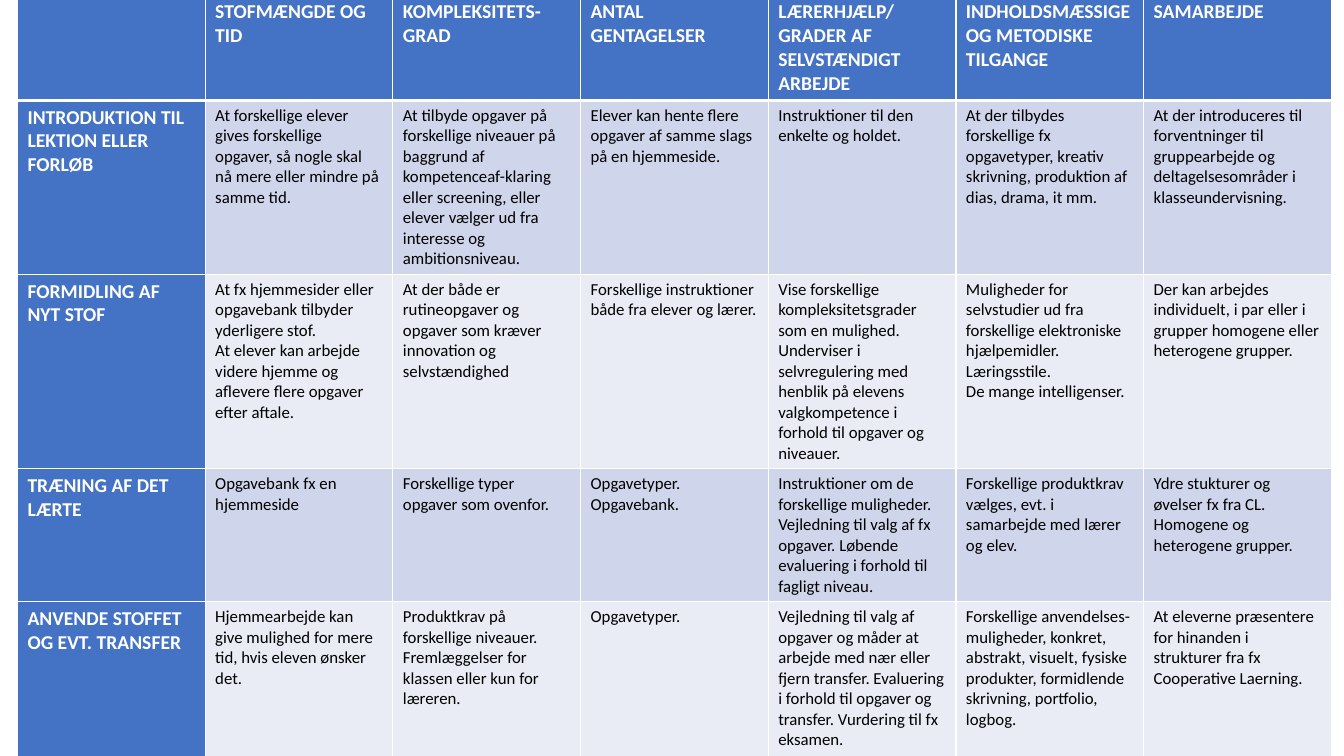
from lxml.etree import SubElement
from pptx import Presentation
from pptx.dml.color import RGBColor as RGB
from pptx.oxml.ns import qn
from pptx.util import Cm, Pt

COLORS = {"head": "4472C4", "odd": "CFD5EA", "even": "E9EBF5",
          "light": "FFFFFF", "dark": "000000"}
FONT = "Calibri"

ROWS = [
    ["", "STOFMÆNGDE OG TID", "KOMPLEKSITETS-GRAD", "ANTAL\nGENTAGELSER",
     "LÆRERHJÆLP/\nGRADER AF SELVSTÆNDIGT ARBEJDE",
     "INDHOLDSMÆSSIGE OG METODISKE TILGANGE", "SAMARBEJDE"],
    ["INTRODUKTION TIL LEKTION ELLER FORLØB",
     "At forskellige elever gives forskellige opgaver, så nogle skal nå mere eller mindre på samme tid.",
     "At tilbyde opgaver på forskellige niveauer på baggrund af kompetenceaf-klaring eller screening, "
     "eller elever vælger ud fra interesse og ambitionsniveau.",
     "Elever kan hente flere opgaver af samme slags på en hjemmeside.",
     "Instruktioner til den enkelte og holdet.",
     "At der tilbydes forskellige fx opgavetyper, kreativ skrivning, produktion af dias, drama, it mm.",
     "At der introduceres til forventninger til gruppearbejde og deltagelsesområder i klasseundervisning."],
    ["FORMIDLING AF NYT STOF",
     "At fx hjemmesider eller opgavebank tilbyder yderligere stof.\n"
     "At elever kan arbejde videre hjemme og aflevere flere opgaver efter aftale.",
     "At der både er rutineopgaver og opgaver som kræver innovation og selvstændighed",
     "Forskellige instruktioner både fra elever og lærer.",
     "Vise forskellige kompleksitetsgrader som en mulighed. Underviser i selvregulering med henblik på "
     "elevens valgkompetence i forhold til opgaver og niveauer.",
     "Muligheder for selvstudier ud fra forskellige elektroniske hjælpemidler.\n"
     "Læringsstile.\nDe mange intelligenser.",
     "Der kan arbejdes individuelt, i par eller i grupper homogene eller heterogene grupper."],
    ["TRÆNING AF DET LÆRTE",
     "Opgavebank fx en hjemmeside",
     "Forskellige typer opgaver som ovenfor.",
     "Opgavetyper.\nOpgavebank.",
     "Instruktioner om de forskellige muligheder. Vejledning til valg af fx opgaver. "
     "Løbende evaluering i forhold til fagligt niveau.",
     "Forskellige produktkrav vælges, evt. i samarbejde med lærer og elev.",
     "Ydre stukturer og øvelser fx fra CL. Homogene og heterogene grupper."],
    ["ANVENDE STOFFET OG EVT. TRANSFER",
     "Hjemmearbejde kan give mulighed for mere tid, hvis eleven ønsker det.",
     "Produktkrav på forskellige niveauer. Fremlæggelser for klassen eller kun for læreren.",
     "Opgavetyper.",
     "Vejledning til valg af opgaver og måder at arbejde med nær eller fjern transfer. "
     "Evaluering i forhold til opgaver og transfer. Vurdering til fx eksamen.",
     "Forskellige anvendelses-muligheder, konkret, abstrakt, visuelt, fysiske produkter, "
     "formidlende skrivning, portfolio, logbog.",
     "At eleverne præsentere for hinanden i strukturer fra fx Cooperative Laerning."],
]
ROW_HEIGHTS = [2.66, 4.38, 4.88, 3.35, 3.98]
COL_WIDTH = 4.73
LEFT, TOP = 0.44, -0.13


def write(tf, text, size=12, color="dark", bold=False):
    for i, line in enumerate(text.split("\n")):
        p = tf.paragraphs[0] if i == 0 else tf.add_paragraph()
        r = p.add_run()
        r.text = line
        r.font.name, r.font.size, r.font.bold = FONT, Pt(size), bold
        r.font.color.rgb = RGB.from_string(COLORS[color])


def add_borders(cell, **widths):
    tc_pr = cell._tc.get_or_add_tcPr()
    for side, width in widths.items():
        ln = SubElement(tc_pr, qn(f"a:ln{side}"), w=str(Pt(width)))
        fill = SubElement(ln, qn("a:solidFill"))
        SubElement(fill, qn("a:srgbClr"), val=COLORS["light"])


def main():
    prs = Presentation()
    prs.slide_width, prs.slide_height = Cm(33.87), Cm(19.05)
    s = prs.slides.add_slide(prs.slide_layouts[6])
    n_rows, n_cols = len(ROWS), len(ROWS[0])
    table = s.shapes.add_table(n_rows, n_cols, Cm(LEFT), Cm(TOP),
                               Cm(COL_WIDTH * n_cols), Cm(sum(ROW_HEIGHTS))).table
    for col in table.columns:
        col.width = Cm(COL_WIDTH)
    for i, (texts, height) in enumerate(zip(ROWS, ROW_HEIGHTS)):
        table.rows[i].height = Cm(height)
        for j, text in enumerate(texts):
            cell = table.cell(i, j)
            heading = i == 0 or j == 0
            add_borders(cell, L=1, R=1, T=3 if i == 1 else 1, B=3 if i == 0 else 1)
            cell.fill.solid()
            band = "head" if heading else "odd" if i % 2 else "even"
            cell.fill.fore_color.rgb = RGB.from_string(COLORS[band])
            if heading and text:
                write(cell.text_frame, text, size=14, color="light", bold=True)
            elif text:
                write(cell.text_frame, text)
    prs.save("out.pptx")


if __name__ == "__main__":
    main()
